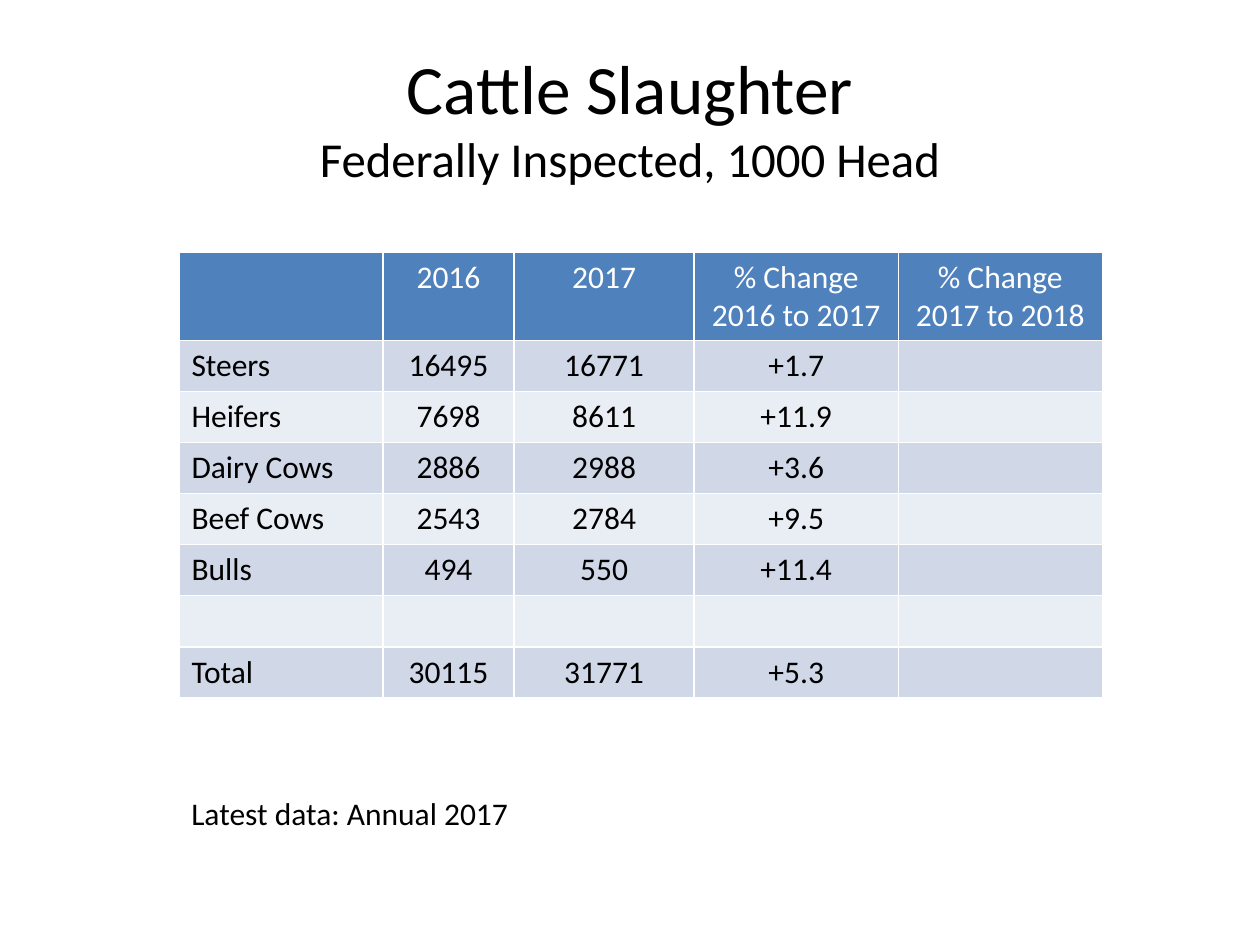
from pptx import Presentation
from pptx.dml.color import RGBColor
from pptx.enum.text import MSO_ANCHOR, PP_ALIGN
from pptx.util import Inches, Pt

FONT = "Calibri"
BLACK, WHITE = "000000", "FFFFFF"
HEADER_FILL = "4F81BD"
BAND_FILLS = ["D0D8E8", "E9EDF4"]

COLUMN_WIDTHS = [1.62, 1.04, 1.43, 1.62, 1.62]
TABLE_HEIGHT, HEADER_HEIGHT = 3.54, 0.7
ROWS = [
    ["", "2016", "2017", "% Change 2016 to 2017", "% Change\n2017 to 2018"],
    ["Steers", "16495", "16771", "+1.7", ""],
    ["Heifers", "7698", "8611", "+11.9", ""],
    ["Dairy Cows", "2886", "2988", "+3.6", ""],
    ["Beef Cows", "2543", "2784", "+9.5", ""],
    ["Bulls", "494", "550", "+11.4", ""],
    ["", "", "", "", ""],
    ["Total", "30115", "31771", "+5.3", ""],
]


def color(hex_string):
    return RGBColor.from_string(hex_string)


def style_font(font, size, hex_string):
    font.name = FONT
    font.size = Pt(size)
    font.bold = False
    font.color.rgb = color(hex_string)


def add_text(slide, left, top, width, height, text, sizes,
             alignment=PP_ALIGN.LEFT, anchor=MSO_ANCHOR.TOP):
    """Add a one-paragraph text box; sizes holds one font size per line."""
    shape = slide.shapes.add_textbox(
        Inches(left), Inches(top), Inches(width), Inches(height))
    text_frame = shape.text_frame
    text_frame.word_wrap = True
    text_frame.vertical_anchor = anchor
    paragraph = text_frame.paragraphs[0]
    paragraph.text = text
    paragraph.alignment = alignment
    for run, size in zip(paragraph.runs, sizes):
        style_font(run.font, size, BLACK)


def fill_cell(cell, text, fill, text_color, alignment):
    cell.fill.solid()
    cell.fill.fore_color.rgb = color(fill)
    cell.text_frame.text = text
    for paragraph in cell.text_frame.paragraphs:
        paragraph.alignment = alignment
        style_font(paragraph.font, 18, text_color)
        for run in paragraph.runs:
            style_font(run.font, 18, text_color)


def add_slaughter_table(slide, left, top):
    table = slide.shapes.add_table(
        len(ROWS), len(COLUMN_WIDTHS), Inches(left), Inches(top),
        Inches(sum(COLUMN_WIDTHS)), Inches(TABLE_HEIGHT)).table
    for column, width in zip(table.columns, COLUMN_WIDTHS):
        column.width = Inches(width)

    body_height = (TABLE_HEIGHT - HEADER_HEIGHT) / (len(ROWS) - 1)
    for row_index, values in enumerate(ROWS):
        is_header = row_index == 0
        table.rows[row_index].height = Inches(
            HEADER_HEIGHT if is_header else body_height)
        fill = HEADER_FILL if is_header else BAND_FILLS[(row_index - 1) % 2]
        text_color = WHITE if is_header else BLACK
        for column_index, value in enumerate(values):
            alignment = PP_ALIGN.CENTER if column_index else PP_ALIGN.LEFT
            fill_cell(table.cell(row_index, column_index), value, fill,
                      text_color, alignment)


def main():
    presentation = Presentation()
    presentation.slide_width = Inches(10)
    presentation.slide_height = Inches(7.5)
    slide = presentation.slides.add_slide(presentation.slide_layouts[6])

    # Title and subtitle
    add_text(slide, 0.5, 0.3, 9, 1.25,
             "Cattle Slaughter\vFederally Inspected, 1000 Head", [39.6, 27.9],
             PP_ALIGN.CENTER, MSO_ANCHOR.MIDDLE)

    # Head counts by class
    add_slaughter_table(slide, 1.42, 2)

    # Data note
    add_text(slide, 1.42, 6.25, 3.5, 0.4, "Latest data: Annual 2017", [18])

    presentation.save("out.pptx")


if __name__ == "__main__":
    main()
